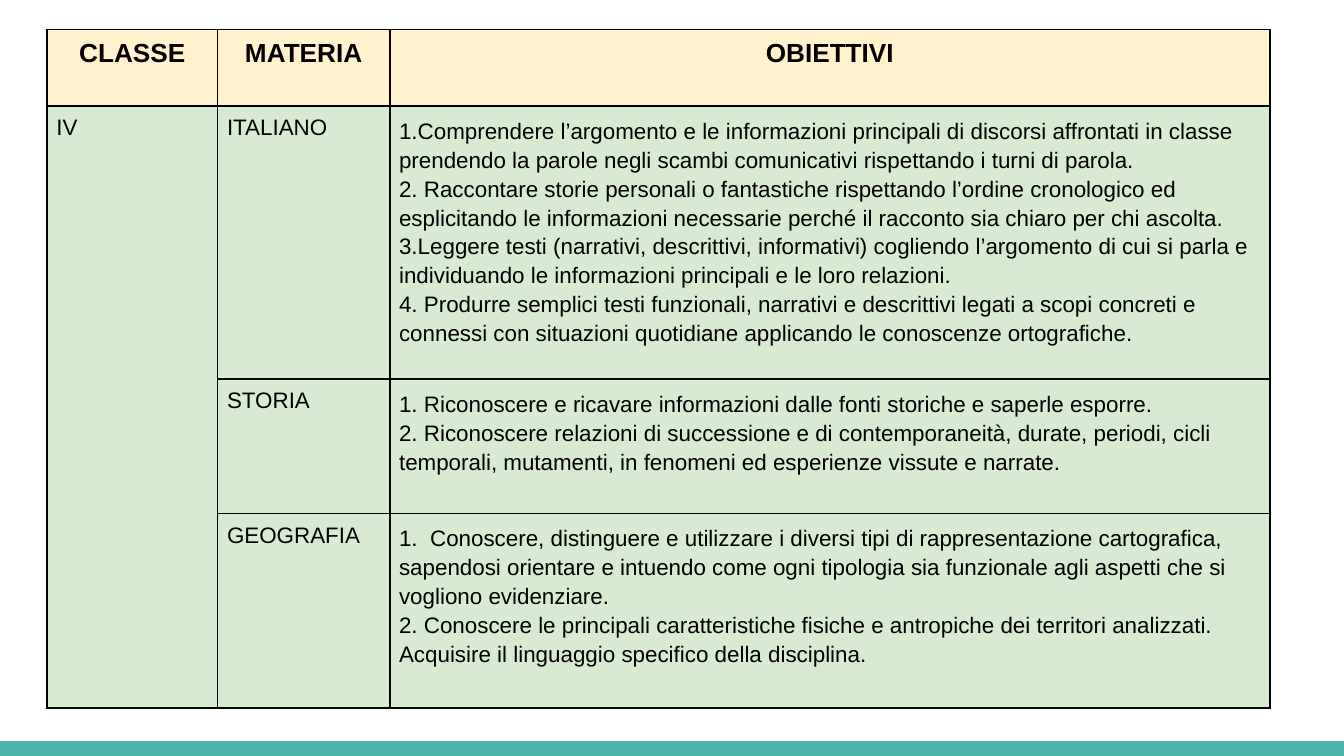
from lxml import etree
from pptx import Presentation
from pptx.dml.color import RGBColor
from pptx.enum import shapes, text
from pptx.oxml.ns import qn
from pptx.util import Inches, Pt

COLORS = {"header": "FFF2CC", "body": "D9EAD3", "ink": "000000", "band": "4DB6AC"}
FONT = "Arial"

HEADERS = ["CLASSE", "MATERIA", "OBIETTIVI"]
CLASS_NAME = "IV"
SUBJECTS = [
    ("ITALIANO", [
        "1.Comprendere l’argomento e le informazioni principali di discorsi affrontati in classe "
        "prendendo la parole negli scambi comunicativi rispettando i turni di parola.",
        "2. Raccontare storie personali o fantastiche rispettando l’ordine cronologico ed "
        "esplicitando le informazioni necessarie perché il racconto sia chiaro per chi ascolta.",
        "3.Leggere testi (narrativi, descrittivi, informativi) cogliendo l’argomento di cui si parla e "
        "individuando le informazioni principali e le loro relazioni.",
        "4. Produrre semplici testi funzionali, narrativi e descrittivi legati a scopi concreti e "
        "connessi con situazioni quotidiane applicando le conoscenze ortografiche.",
    ]),
    ("STORIA", [
        "1. Riconoscere e ricavare informazioni dalle fonti storiche e saperle esporre.",
        "2. Riconoscere relazioni di successione e di contemporaneità, durate, periodi, cicli "
        "temporali, mutamenti, in fenomeni ed esperienze vissute e narrate.",
    ]),
    ("GEOGRAFIA", [
        "1.  Conoscere, distinguere e utilizzare i diversi tipi di rappresentazione cartografica, "
        "sapendosi orientare e intuendo come ogni tipologia sia funzionale agli aspetti che si "
        "vogliono evidenziare.",
        "2. Conoscere le principali caratteristiche fisiche e antropiche dei territori analizzati. "
        "Acquisire il linguaggio specifico della disciplina.",
    ]),
]
COLUMN_WIDTHS = [1.27, 1.28, 6.55]
ROW_HEIGHTS = [0.57, 2.03, 1, 1.45]


def color(name):
    return RGBColor.from_string(COLORS[name])


def style_cell(cell, fill):
    """Set the borders, then the fill and margins of a cell."""
    properties = cell._tc.get_or_add_tcPr()
    for side in ("lnL", "lnR", "lnT", "lnB"):
        line = etree.SubElement(properties, qn(f"a:{side}"), w=str(Pt(1)))
        solid = etree.SubElement(line, qn("a:solidFill"))
        etree.SubElement(solid, qn("a:srgbClr"), val=COLORS["ink"])
    cell.fill.solid()
    cell.fill.fore_color.rgb = color(fill)
    cell.margin_left = cell.margin_right = Inches(0.07)
    cell.margin_top = cell.margin_bottom = Inches(0.07)


def write_cell(cell, lines, size=12, bold=False, align=text.PP_ALIGN.LEFT, spacing=None):
    frame = cell.text_frame
    for index, line in enumerate(lines):
        paragraph = frame.add_paragraph() if index else frame.paragraphs[0]
        paragraph.alignment = align
        if spacing:
            paragraph.line_spacing = spacing
        run = paragraph.add_run()
        run.text = line
        run.font.name = FONT
        run.font.size = Pt(size)
        run.font.bold = bold
        run.font.color.rgb = color("ink")


# Widescreen 16:9 slide
presentation = Presentation()
presentation.slide_width = Inches(10)
presentation.slide_height = Inches(10) * 9 // 16
slide = presentation.slides.add_slide(presentation.slide_layouts[6])

# Bottom band
band_height = Inches(0.11)
band = slide.shapes.add_shape(
    shapes.MSO_SHAPE.RECTANGLE, 0, presentation.slide_height - band_height,
    presentation.slide_width, band_height)
band.shadow.inherit = False
band.fill.solid()
band.fill.fore_color.rgb = color("band")
band.line.fill.background()

# Table grid
table = slide.shapes.add_table(
    len(ROW_HEIGHTS), len(COLUMN_WIDTHS), Inches(0.35), Inches(0.22),
    Inches(sum(COLUMN_WIDTHS)), Inches(sum(ROW_HEIGHTS))).table
for column, width in zip(table.columns, COLUMN_WIDTHS):
    column.width = Inches(width)
for index, (row, height) in enumerate(zip(table.rows, ROW_HEIGHTS)):
    row.height = Inches(height)
    for cell in row.cells:
        style_cell(cell, "body" if index else "header")
table.cell(1, 0).merge(table.cell(len(SUBJECTS), 0))

# Table text
for index, header in enumerate(HEADERS):
    write_cell(table.cell(0, index), [header], size=14, bold=True, align=text.PP_ALIGN.CENTER)
write_cell(table.cell(1, 0), [CLASS_NAME])
for index, (subject, goals) in enumerate(SUBJECTS, start=1):
    write_cell(table.cell(index, 1), [subject])
    write_cell(table.cell(index, 2), goals, spacing=1.15)

presentation.save("out.pptx")
